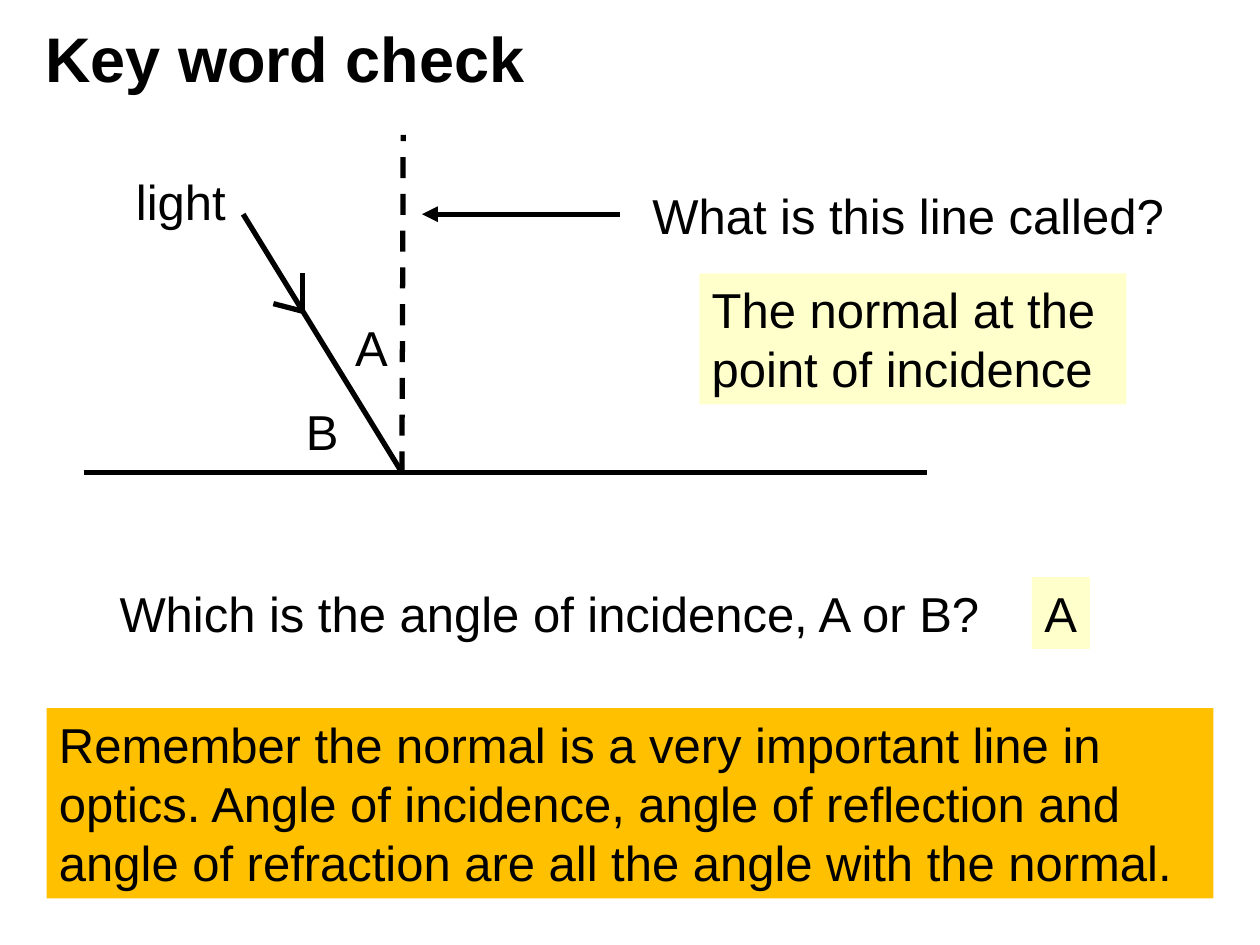
"""Build a slide that checks key words about the normal and the angle of incidence."""
from dataclasses import dataclass

from lxml import etree
from pptx import Presentation
from pptx.dml.color import RGBColor
from pptx.enum.dml import MSO_LINE
from pptx.enum.shapes import MSO_CONNECTOR, MSO_SHAPE
from pptx.enum.text import MSO_ANCHOR, MSO_AUTO_SIZE, PP_ALIGN
from pptx.oxml.ns import qn
from pptx.util import Inches, Pt

STRAIGHT = MSO_CONNECTOR.STRAIGHT
RECT = MSO_SHAPE.RECTANGLE
DASH = MSO_LINE.DASH
LEFT = PP_ALIGN.LEFT
TOP, MIDDLE = MSO_ANCHOR.TOP, MSO_ANCHOR.MIDDLE
GROW = MSO_AUTO_SIZE.SHAPE_TO_FIT_TEXT


@dataclass(frozen=True)
class Theme:
    font: str = "Arial"
    ink: RGBColor = RGBColor(0, 0, 0)
    answer: RGBColor = RGBColor(0xFF, 0xFF, 0xCC)
    note: RGBColor = RGBColor(0xFF, 0xC0, 0x00)
    title: Pt = Pt(36)
    body: Pt = Pt(28)
    stroke: Pt = Pt(3)


theme = Theme()
deck = Presentation()
deck.slide_width, deck.slide_height = Inches(10), Inches(7.5)
slide = deck.slides.add_slide(deck.slide_layouts[6])


def add_text(text, box, fill=None, wrap=True, size=theme.body, bold=False):
    place = [Inches(n) for n in box]
    if fill is None:
        shape = slide.shapes.add_textbox(*place)
    else:
        shape = slide.shapes.add_shape(RECT, *place)
        shape.shadow.inherit = False
        shape.fill.solid()
        shape.fill.fore_color.rgb = fill
        shape.line.fill.background()
    frame = shape.text_frame
    frame.text = text
    frame.word_wrap = wrap
    frame.auto_size = GROW
    frame.vertical_anchor = MIDDLE if bold else TOP
    para = frame.paragraphs[0]
    para.alignment = LEFT
    if bold:
        para.line_spacing = 0.9
    font = para.runs[0].font
    font.name, font.size, font.bold = theme.font, size, bold
    font.color.rgb = theme.ink


def add_line(start, end):
    line = slide.shapes.add_connector(STRAIGHT, *[Inches(n) for n in start + end])
    line.line.color.rgb = theme.ink
    line.line.width = theme.stroke
    etree.SubElement(line._element.spPr, qn("a:effectLst"))
    return line


add_text("Key word check", (0.26, 0.17, 9.54, 0.65), size=theme.title, bold=True)

hit = (3.19, 3.75)
tip = (2.4, 2.47)
add_line((0.67, 3.75), (7.36, 3.75))
add_line((1.93, 1.7), hit)
for barb in ((2.4, 2.17), (2.17, 2.41)):
    add_line(tip, barb)
normal = add_line(hit, (3.2, 1.07))
normal.line.dash_style = DASH

arrow = add_line((4.92, 1.7), (3.35, 1.7))
etree.SubElement(arrow.line._get_or_add_ln(), qn("a:tailEnd"), type="triangle")

labels = (
    ("light", 0.98, 1.31, 0.92),
    ("A", 2.72, 2.47, 0.46),
    ("B", 2.33, 3.14, 0.46),
)
for text, left, top, width in labels:
    add_text(text, (left, top, width, 0.57), wrap=False)

add_text("What is this line called?", (5.08, 1.42, 4.33, 0.57))
add_text("The normal at the point of incidence", (5.55, 2.17, 3.39, 1.04), theme.answer)
add_text("Which is the angle of incidence, A or B?", (0.85, 4.58, 7.32, 0.57))
add_text("A", (8.19, 4.58, 0.46, 0.57), theme.answer, wrap=False)
add_text(
    "Remember the normal is a very important line in optics. "
    "Angle of incidence, angle of reflection and angle of refraction "
    "are all the angle with the normal.",
    (0.37, 5.62, 9.26, 1.51),
    theme.note,
)

deck.save("out.pptx")
